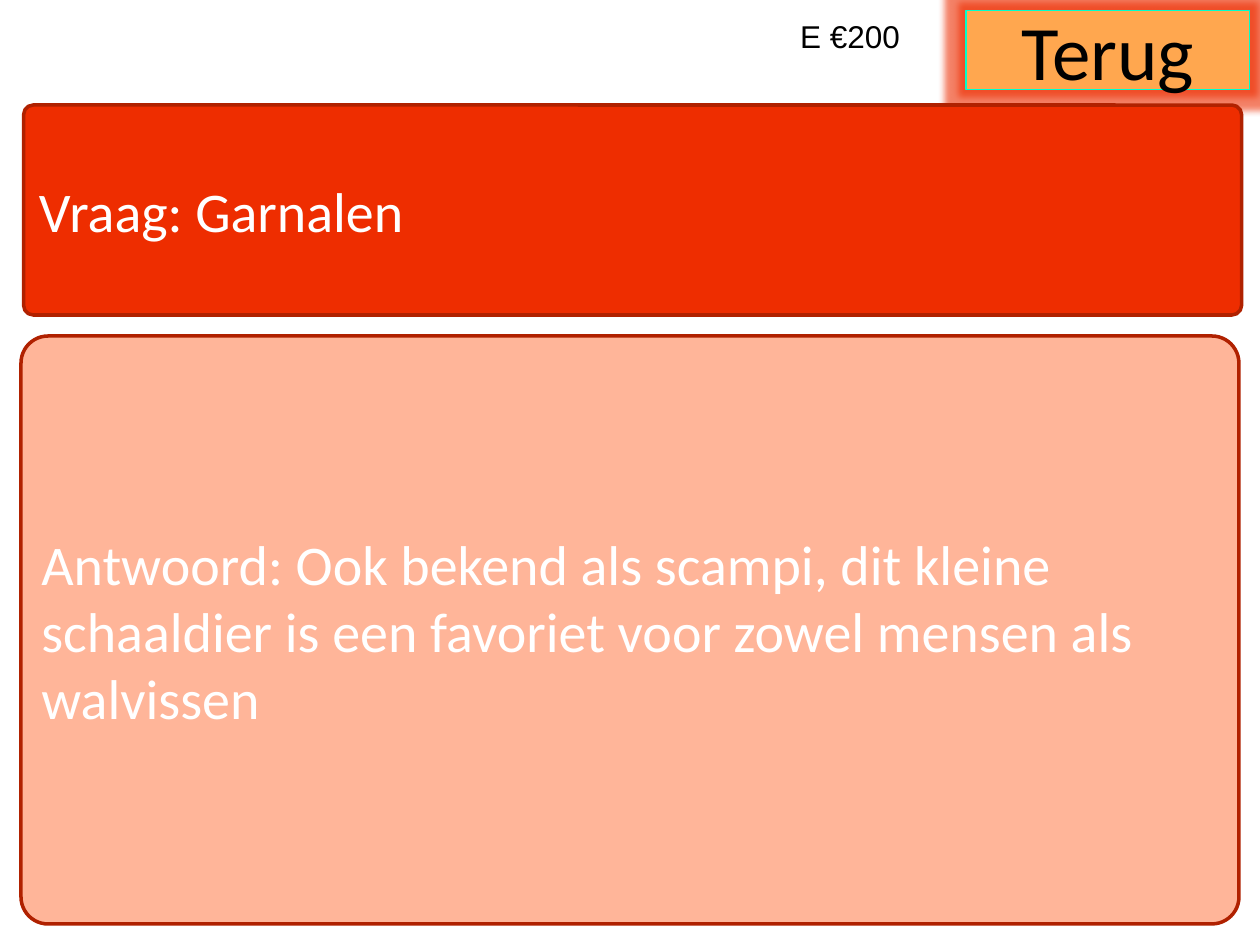
from lxml import etree
from pptx import Presentation
from pptx.dml.color import RGBColor
from pptx.enum.shapes import MSO_SHAPE
from pptx.enum.text import MSO_ANCHOR, PP_ALIGN
from pptx.oxml.ns import qn
from pptx.util import Inches, Pt

RECTANGLE, ROUNDED = MSO_SHAPE.RECTANGLE, MSO_SHAPE.ROUNDED_RECTANGLE
TOP, MIDDLE = MSO_ANCHOR.TOP, MSO_ANCHOR.MIDDLE
LEFT, CENTER = PP_ALIGN.LEFT, PP_ALIGN.CENTER

COLORS = {
    "black": "000000",
    "white": "FFFFFF",
    "button": "FFA74F",
    "button_line": "00FFCC",
    "glow": "EE2D00",
    "question": "EE2D00",
    "answer": "FFB599",
    "card_line": "B02100",
}

# Grid of 120 columns by 90 rows; boxes are (column, row, columns, rows).
CELL = Inches(10) // 120
BUTTON_BOX = (92, 1, 27, 7.5)
LABEL_BOX = (75, 1, 17, 7.5)
QUESTION_BOX = (2.25, 10, 116, 20)
ANSWER_BOX = (2, 32, 116, 56)


def color(name):
    return RGBColor.from_string(COLORS[name])


def grid(box):
    return [int(cells * CELL) for cells in box]


def write(shape, text, size, font, ink, align=LEFT, anchor=MIDDLE):
    frame = shape.text_frame
    frame.word_wrap = True
    frame.vertical_anchor = anchor
    para = frame.paragraphs[0]
    para.alignment = align
    span = para.add_run()
    span.text = text
    span.font.size = Pt(size)
    span.font.name = font
    span.font.color.rgb = color(ink)


def add_panel(page, kind, box, fill, line, width):
    panel = page.shapes.add_shape(kind, *grid(box))
    panel.shadow.inherit = False
    panel.fill.solid()
    panel.fill.fore_color.rgb = color(fill)
    panel.line.color.rgb = color(line)
    panel.line.width = Pt(width)
    return panel


def add_glow(shape, name, radius, opacity):
    effects = shape.element.spPr.find(qn("a:effectLst"))
    glow = etree.SubElement(effects, qn("a:glow"), rad=str(Pt(radius)))
    tint = etree.SubElement(glow, qn("a:srgbClr"), val=COLORS[name])
    etree.SubElement(tint, qn("a:alpha"), val=str(opacity * 1000))


def add_back_button(page, box):
    button = add_panel(page, RECTANGLE, box, "button", "button_line", 0.75)
    add_glow(button, "glow", 8, 60)
    write(button, "Terug", 44, "Calibri", "black", CENTER)


def place_label(page, box):
    """Use the title placeholder for the category and prize."""
    label = page.shapes.title
    label.left, label.top, label.width, label.height = grid(box)
    write(label, "E €200", 18, "Arial", "black", anchor=TOP)


def add_card(page, box, fill, text):
    card = add_panel(page, ROUNDED, box, fill, "card_line", 2)
    card.adjustments[0] = 0.046
    write(card, text, 32, "Calibri", "white")


def main():
    deck = Presentation()
    deck.slide_width, deck.slide_height = 120 * CELL, 90 * CELL
    page = deck.slides.add_slide(deck.slide_layouts.get_by_name("Title Only"))
    add_back_button(page, BUTTON_BOX)
    place_label(page, LABEL_BOX)
    add_card(page, ANSWER_BOX, "answer",
             "Antwoord: Ook bekend als scampi, dit kleine schaaldier is een "
             "favoriet voor zowel mensen als walvissen")
    add_card(page, QUESTION_BOX, "question", "Vraag: Garnalen")
    deck.save("out.pptx")


if __name__ == "__main__":
    main()
